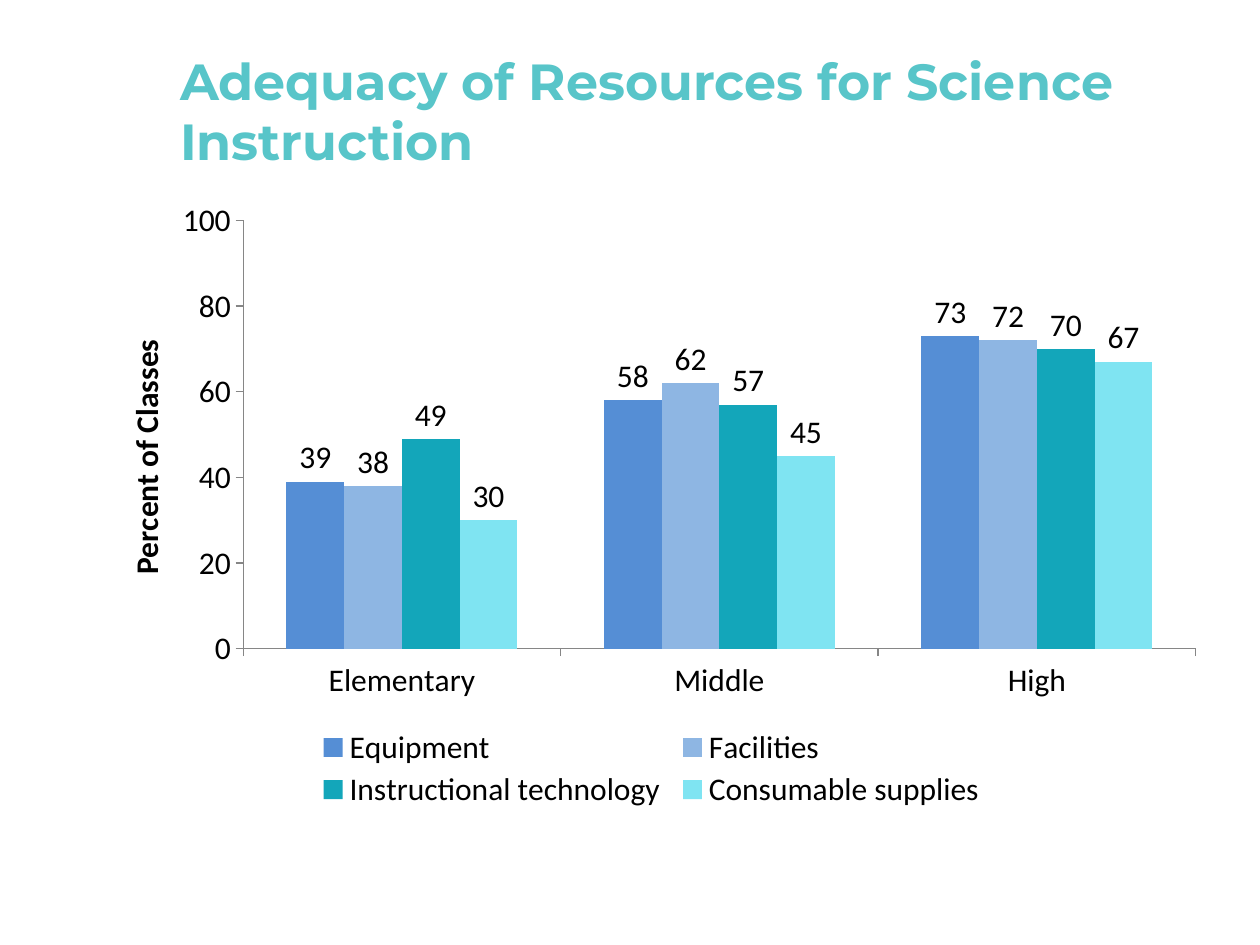
from lxml.etree import SubElement
from pptx import Presentation
from pptx.chart.data import CategoryChartData
from pptx.dml.color import RGBColor
from pptx.enum.chart import XL_CHART_TYPE as CT, XL_LABEL_POSITION as LP
from pptx.enum.chart import XL_LEGEND_POSITION as LegendPos, XL_TICK_MARK as Tick
from pptx.enum.text import MSO_ANCHOR, PP_ALIGN
from pptx.oxml.ns import qn
from pptx.util import Inches, Pt

# Content
TITLE = "Adequacy of Resources for Science Instruction"
AXIS_TITLE = "Percent of Classes"
LEVELS = ["Elementary", "Middle", "High"]
RESOURCES = [
    ("Equipment", (39, 58, 73), RGBColor(0x55, 0x8E, 0xD5)),
    ("Facilities", (38, 62, 72), RGBColor(0x8E, 0xB6, 0xE3)),
    ("Instructional technology", (49, 57, 70), RGBColor(0x13, 0xA6, 0xBA)),
    ("Consumable supplies", (30, 45, 67), RGBColor(0x7F, 0xE4, 0xF2)),
]

# Formats
BLACK = RGBColor(0, 0, 0)
TEAL = RGBColor(0x58, 0xC5, 0xC9)
GRAY = RGBColor(0x86, 0x86, 0x86)
TITLE_FONT = {"name": "Montserrat", "size": Pt(29), "bold": True}
CHART_FONT = {"name": "Calibri", "size": Pt(18), "bold": False}


def set_font(font, values, color):
    for name, value in values.items():
        setattr(font, name, value)
    font.color.rgb = color


def set_layout(parent, index, **fractions):
    """Place a chart part by fractions of the chart's size."""
    for old in parent.findall(qn("c:layout")):
        parent.remove(old)
    layout = SubElement(parent, qn("c:layout"))
    parent.insert(index, layout)
    manual = SubElement(layout, qn("c:manualLayout"))
    if parent.tag == qn("c:plotArea"):
        SubElement(manual, qn("c:layoutTarget")).set("val", "inner")
    for key in ("xMode", "yMode"):
        SubElement(manual, qn(f"c:{key}")).set("val", "edge")
    for key, value in fractions.items():
        SubElement(manual, qn(f"c:{key}")).set("val", str(value))


prs = Presentation()
prs.slide_width, prs.slide_height = Inches(10), Inches(7.5)
s = prs.slides.add_slide(prs.slide_layouts[5])

# Title
title = s.shapes.title
title.left, title.top = Inches(1.33), Inches(0.25)
title.width, title.height = Inches(8.17), Inches(1.25)
tf = title.text_frame
tf.text = TITLE
tf.word_wrap = True
tf.vertical_anchor = MSO_ANCHOR.MIDDLE
p = tf.paragraphs[0]
p.alignment = PP_ALIGN.LEFT
set_font(p.runs[0].font, TITLE_FONT, TEAL)

# Chart
data = CategoryChartData(number_format="0")
data.categories = LEVELS
for name, values, _ in RESOURCES:
    data.add_series(name, values)
chart = s.shapes.add_chart(CT.COLUMN_CLUSTERED, Inches(0.67), Inches(1.5),
                           Inches(9), Inches(5), data).chart
set_font(chart.font, CHART_FONT, BLACK)
chart.has_title = False

# Columns and their labels
plot = chart.plots[0]
plot.gap_width, plot.overlap = 150, 0
plot.vary_by_categories = False
for series, (_, _, color) in zip(plot.series, RESOURCES):
    series.format.fill.solid()
    series.format.fill.fore_color.rgb = color
    labels = series.data_labels
    labels.show_value = True
    labels.position = LP.OUTSIDE_END
    set_font(labels.font, CHART_FONT, BLACK)

# Axes
value_axis = chart.value_axis
value_axis.minimum_scale, value_axis.maximum_scale = 0, 100
value_axis.major_unit = 20
for axis in (chart.category_axis, value_axis):
    axis.has_major_gridlines = False
    axis.major_tick_mark = Tick.OUTSIDE
    axis.minor_tick_mark = Tick.NONE
    axis.format.line.color.rgb = GRAY
    axis.format.line.width = Pt(0.75)
    set_font(axis.tick_labels.font, CHART_FONT, BLACK)

axis_title = value_axis.axis_title
axis_title.text_frame.text = AXIS_TITLE
set_font(axis_title.text_frame.paragraphs[0].runs[0].font,
         CHART_FONT | {"bold": True}, BLACK)

# Legend
chart.has_legend = True
legend = chart.legend
legend.position = LegendPos.BOTTOM
legend.include_in_layout = False
set_font(legend.font, CHART_FONT, BLACK)

# Positions inside the chart
plot_area = chart.element.find(".//" + qn("c:plotArea"))
legend_part = chart.element.find(".//" + qn("c:legend"))
title_part = plot_area.find(".//" + qn("c:title"))
set_layout(plot_area, 0, x=0.14, y=0.05, w=0.84, h=0.68)
set_layout(legend_part, 1, x=0.2, y=0.85, w=0.6, h=0.14)
set_layout(title_part, 1, x=0.03, y=0.23)

prs.save("out.pptx")
